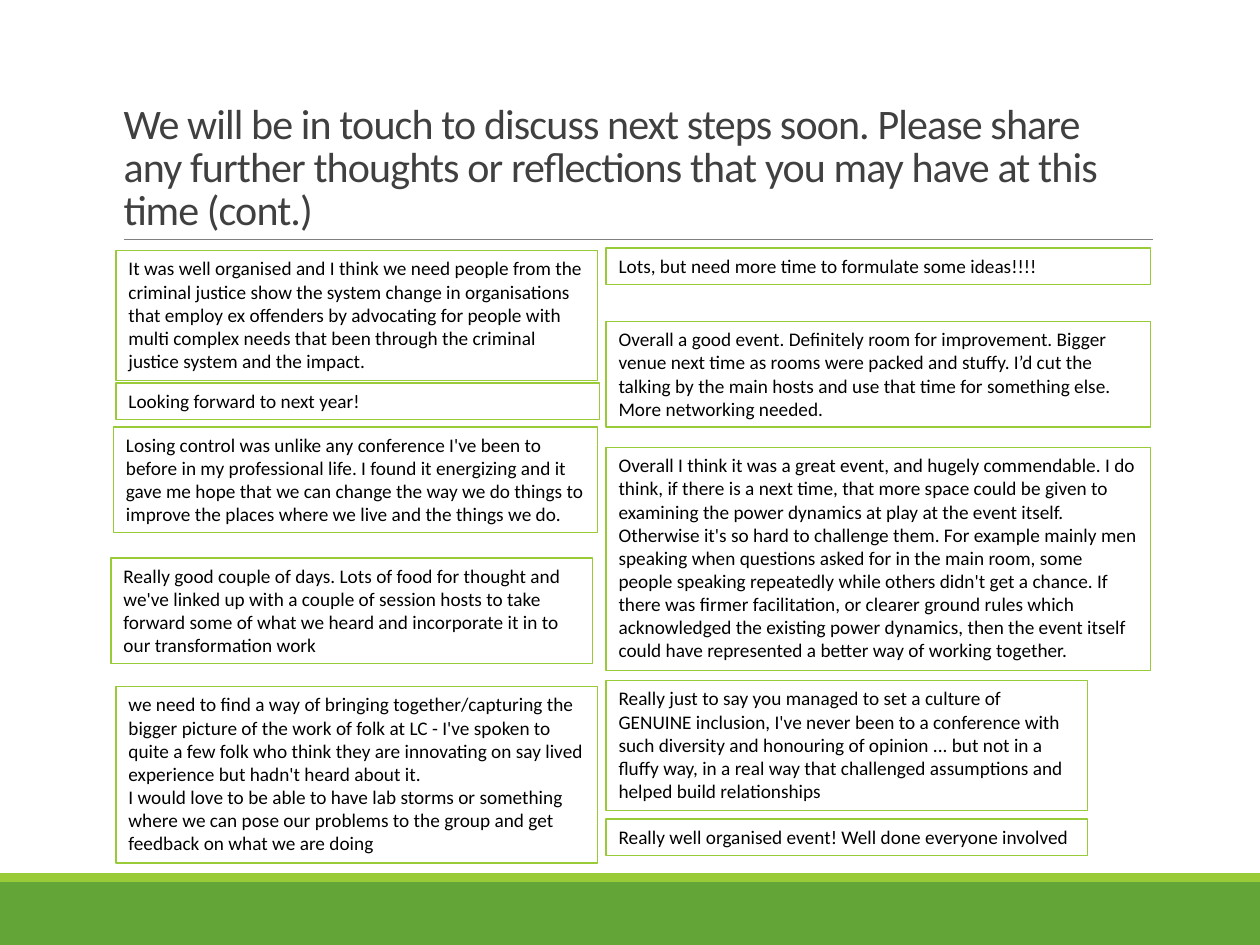
import dataclasses

import pptx
import pptx.dml.color
import pptx.enum.shapes
import pptx.enum.text
import pptx.util
import lxml.etree

Cm = pptx.util.Cm
Pt = pptx.util.Pt
RGB = pptx.dml.color.RGBColor


@dataclasses.dataclass(frozen=True)
class Theme:
    font: str = "Calibri"
    title_size: float = 24
    quote_size: float = 11
    title_color: RGB = RGB(0x40, 0x40, 0x40)
    text_color: RGB = RGB(0, 0, 0)
    rule_color: RGB = RGB(0x80, 0x80, 0x80)
    dark_green: RGB = RGB(0x63, 0xA5, 0x37)
    light_green: RGB = RGB(0x99, 0xCB, 0x38)


THEME = Theme()
PAGE_WIDTH, PAGE_HEIGHT = 25.4, 19.05
RIGHT_COLUMN = 12.22
NARROW, MEDIUM, WIDE = 9.7, 9.75, 10.97

TITLE = (
    "We will be in touch to discuss next steps soon. Please share any further "
    "thoughts or reflections that you may have at this time (cont.)"
)

QUOTES = [
    (2.34, 5.05, NARROW, 2.62,
     "It was well organised and I think we need people from the criminal justice show "
     "the system change in organisations that employ ex offenders by advocating for "
     "people with multi complex needs that been through the criminal justice system "
     "and the impact."),
    (RIGHT_COLUMN, 5.0, WIDE, 0.74,
     "Lots, but need more time to formulate some ideas!!!!"),
    (2.34, 7.72, MEDIUM, 0.74,
     "Looking forward to next year!"),
    (RIGHT_COLUMN, 6.48, WIDE, 2.13,
     "Overall a good event. Definitely room for improvement. Bigger venue next time as "
     "rooms were packed and stuffy. I’d cut the talking by the main hosts and use that "
     "time for something else. More networking needed."),
    (2.29, 8.61, MEDIUM, 2.13,
     "Losing control was unlike any conference I've been to before in my professional "
     "life. I found it energizing and it gave me hope that we can change the way we do "
     "things to improve the places where we live and the things we do."),
    (RIGHT_COLUMN, 9.02, WIDE, 4.5,
     "Overall I think it was a great event, and hugely commendable. I do think, if there "
     "is a next time, that more space could be given to examining the power dynamics at "
     "play at the event itself. Otherwise it's so hard to challenge them. For example "
     "mainly men speaking when questions asked for in the main room, some people "
     "speaking repeatedly while others didn't get a chance. If there was firmer "
     "facilitation, or clearer ground rules which acknowledged the existing power "
     "dynamics, then the event itself could have represented a better way of working "
     "together."),
    (2.24, 11.25, NARROW, 2.13,
     "Really good couple of days. Lots of food for thought and we've linked up with a "
     "couple of session hosts to take forward some of what we heard and incorporate it "
     "in to our transformation work"),
    (RIGHT_COLUMN, 13.72, NARROW, 2.62,
     "Really just to say you managed to set a culture of GENUINE inclusion, I've never "
     "been to a conference with such diversity and honouring of opinion ... but not in a "
     "fluffy way, in a real way that challenged assumptions and helped build "
     "relationships"),
    (RIGHT_COLUMN, 16.51, NARROW, 0.74,
     "Really well organised event! Well done everyone involved"),
    (2.34, 13.84, NARROW, 3.56,
     "we need to find a way of bringing together/capturing the bigger picture of the "
     "work of folk at LC - I've spoken to quite a few folk who think they are innovating "
     "on say lived experience but hadn't heard about it.\v"
     "I would love to be able to have lab storms or something where we can pose our "
     "problems to the group and get feedback on what we are doing"),
]


def style_text(paragraph, size, color):
    paragraph.alignment = pptx.enum.text.PP_ALIGN.LEFT
    paragraph.font.name = THEME.font
    paragraph.font.size = Pt(size)
    paragraph.font.color.rgb = color


def add_band(page, top, height, color):
    band = page.shapes.add_shape(
        pptx.enum.shapes.MSO_SHAPE.RECTANGLE, 0, Cm(top), Cm(PAGE_WIDTH), Cm(height))
    band.shadow.inherit = False
    band.fill.solid()
    band.fill.fore_color.rgb = color
    band.line.fill.background()


def add_rule(page, left, right, top):
    rule = page.shapes.add_connector(
        pptx.enum.shapes.MSO_CONNECTOR.STRAIGHT, Cm(left), Cm(top), Cm(right), Cm(top))
    rule.line.color.rgb = THEME.rule_color
    rule.line.width = Pt(0.5)
    lxml.etree.SubElement(
        rule.element.spPr, pptx.oxml.ns.qn("a:effectLst"))


def set_title(page, text):
    title = page.shapes.title
    title.left, title.top = Cm(2.24), Cm(0.81)
    title.width, title.height = Cm(20.96), Cm(4.04)
    frame = title.text_frame
    frame.text = text
    frame.word_wrap = True
    frame.auto_size = pptx.enum.text.MSO_AUTO_SIZE.NONE
    frame.vertical_anchor = pptx.enum.text.MSO_ANCHOR.BOTTOM
    paragraph = frame.paragraphs[0]
    paragraph.line_spacing = 0.85
    style_text(paragraph, THEME.title_size, THEME.title_color)
    paragraph.runs[0].font._element.set("spc", "-50")


def add_quote(page, left, top, width, height, text):
    box = page.shapes.add_textbox(Cm(left), Cm(top), Cm(width), Cm(height))
    box.line.color.rgb = THEME.light_green
    box.line.width = Pt(0.75)
    frame = box.text_frame
    frame.word_wrap = True
    frame.auto_size = pptx.enum.text.MSO_AUTO_SIZE.SHAPE_TO_FIT_TEXT
    paragraph = frame.paragraphs[0]
    paragraph.text = text
    style_text(paragraph, THEME.quote_size, THEME.text_color)


def main():
    deck = pptx.Presentation()
    deck.slide_width, deck.slide_height = Cm(PAGE_WIDTH), Cm(PAGE_HEIGHT)
    page = deck.slides.add_slide(deck.slide_layouts.get_by_name("Title Only"))
    add_band(page, 17.78, 1.27, THEME.dark_green)
    add_band(page, 17.6, 0.18, THEME.light_green)
    add_rule(page, 2.49, 23.24, 4.83)
    set_title(page, TITLE)
    for quote in QUOTES:
        add_quote(page, *quote)
    deck.save("out.pptx")


if __name__ == "__main__":
    main()
